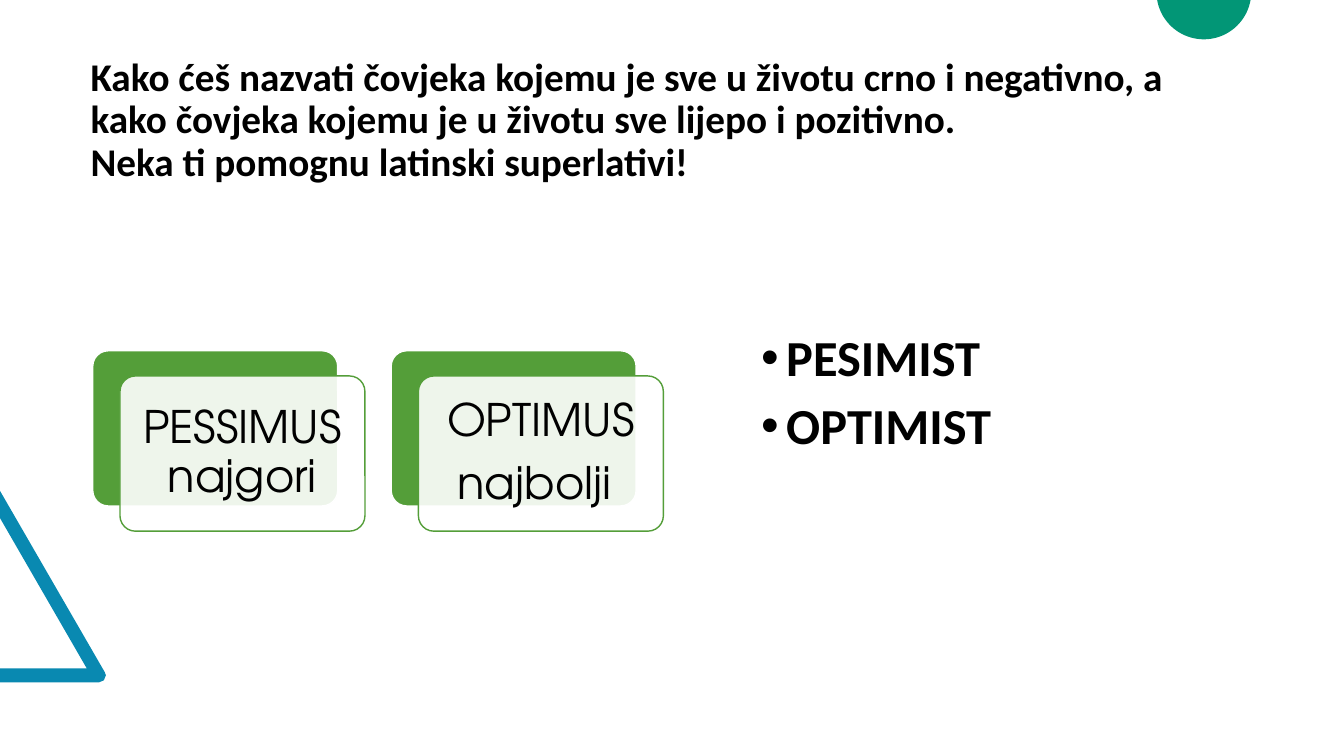
import math

import pptx
import pptx.dml.color
import pptx.enum.shapes
import pptx.enum.text
import pptx.oxml
import pptx.oxml.ns
import pptx.util

Inches, Pt = pptx.util.Inches, pptx.util.Pt
ANCHOR = pptx.enum.text.MSO_ANCHOR
ALIGN = pptx.enum.text.PP_ALIGN

WIDTH, HEIGHT = 13.33, 7.5
BLACK, WHITE, GREEN, TEAL, BLUE = "000000", "FFFFFF", "549E39", "029676", "0989B1"
BODY_FONT, CARD_FONT = "Calibri", "TeX Gyre Adventor"

QUESTION = ("Kako ćeš nazvati čovjeka kojemu je sve u životu crno i negativno, "
            "a kako čovjeka kojemu je u životu sve lijepo i pozitivno. \v"
            "Neka ti pomognu latinski superlativi!")
SUPERLATIVES = ["PESSIMUS najgori", "OPTIMUS\nnajbolji "]
ANSWERS = "PESIMIST\nOPTIMIST"


def color(hex_code):
    return pptx.dml.color.RGBColor.from_string(hex_code)


def paint(shape, fill, line=None):
    shape.shadow.inherit = False
    shape.fill.solid()
    shape.fill.fore_color.rgb = color(fill)
    if line:
        shape.line.color.rgb = color(line)
        shape.line.width = Pt(1)
    else:
        shape.line.fill.background()


def write(frame, text, size, font, bold=False, align=ALIGN.LEFT):
    frame.word_wrap = True
    frame.text = text
    for paragraph in frame.paragraphs:
        paragraph.alignment = align
        paragraph.line_spacing = 0.9
        for run in paragraph.runs:
            run.font.size = Pt(size)
            run.font.name = font
            run.font.bold = bold
            run.font.color.rgb = color(BLACK)


def add_outline(slide, points, fill):
    corners = [(Inches(x), Inches(y)) for x, y in points]
    builder = slide.shapes.build_freeform(*corners[0])
    builder.add_line_segments(corners[1:], close=True)
    paint(builder.convert_to_shape(), fill)


def add_decorations(slide):
    """Draw the triangle and the disc that the slide's edges cut off."""
    add_outline(slide, [(0, 6.77), (0, 6.63), (0.86, 6.63), (0, 5.14), (0, 4.87),
                        (1.04, 6.67), (1.05, 6.7), (1.03, 6.75), (0.98, 6.77)], BLUE)
    center_x, center_y, radius = 11.94, -0.08, 0.47
    start = math.asin(-center_y / radius)
    steps = 40
    angles = [start + (math.pi - 2 * start) * i / steps for i in range(steps + 1)]
    add_outline(slide, [(center_x + radius * math.cos(a), center_y + radius * math.sin(a))
                        for a in angles], TEAL)


def add_text(slide, box, text, size, top_inset):
    frame = slide.shapes.add_textbox(*map(Inches, box)).text_frame
    write(frame, text, size, BODY_FONT, bold=True)
    frame.vertical_anchor = ANCHOR.TOP
    frame.margin_top = Inches(top_inset)
    return frame


def add_answers(slide, box):
    frame = add_text(slide, box, ANSWERS, 36, top_inset=1.3)
    for paragraph in frame.paragraphs:
        paragraph.space_before = Pt(10)
        properties = paragraph._p.get_or_add_pPr()
        properties.set("marL", str(Inches(0.25)))
        properties.set("indent", str(Inches(-0.25)))
        properties.append(pptx.oxml.parse_xml(
            f'<a:buFont {pptx.oxml.ns.nsdecls("a")} typeface="Arial"/>'))
        properties.append(pptx.oxml.parse_xml(
            f'<a:buChar {pptx.oxml.ns.nsdecls("a")} char="•"/>'))


def add_card(slide, box, text):
    """Place a green plate and, offset over it, a translucent plate with text."""
    left, top, width, height = box
    shift_x, shift_y = 0.27, 0.25
    plate_size = (width - shift_x, height - shift_y)
    rounded = pptx.enum.shapes.MSO_SHAPE.ROUNDED_RECTANGLE
    back, front = [
        slide.shapes.add_shape(rounded, *map(Inches, (x, y, *plate_size)))
        for x, y in [(left, top), (left + shift_x, top + shift_y)]]
    for plate in (back, front):
        plate.adjustments[0] = 0.1
    paint(back, GREEN, WHITE)
    paint(front, WHITE, GREEN)
    fill_color = front.fill._xPr.find(".//" + pptx.oxml.ns.qn("a:srgbClr"))
    fill_color.append(pptx.oxml.parse_xml(
        f'<a:alpha {pptx.oxml.ns.nsdecls("a")} val="90000"/>'))
    frame = front.text_frame
    write(frame, text, 32, CARD_FONT, align=ALIGN.CENTER)
    frame.vertical_anchor = ANCHOR.MIDDLE
    frame.margin_left = frame.margin_right = Inches(0.13)
    frame.margin_top = frame.margin_bottom = Inches(0.13)
    for paragraph in frame.paragraphs:
        paragraph.space_after = Pt(11)


def add_cards(slide, box, pitch):
    left, top, width, height = box
    for column, text in enumerate(SUPERLATIVES):
        add_card(slide, (left + column * pitch, top, width, height), text)


def main():
    deck = pptx.Presentation()
    deck.slide_width, deck.slide_height = Inches(WIDTH), Inches(HEIGHT)
    slide = deck.slides.add_slide(deck.slide_layouts[6])
    add_decorations(slide)
    add_text(slide, (0.8, 0.4, 11.62, 2.34), QUESTION, 28, top_inset=0.17)
    add_cards(slide, (0.92, 3.48, 2.7, 1.79), pitch=2.96)
    add_answers(slide, (7.45, 2, 4.96, 4.76))
    deck.save("out.pptx")


if __name__ == "__main__":
    main()
